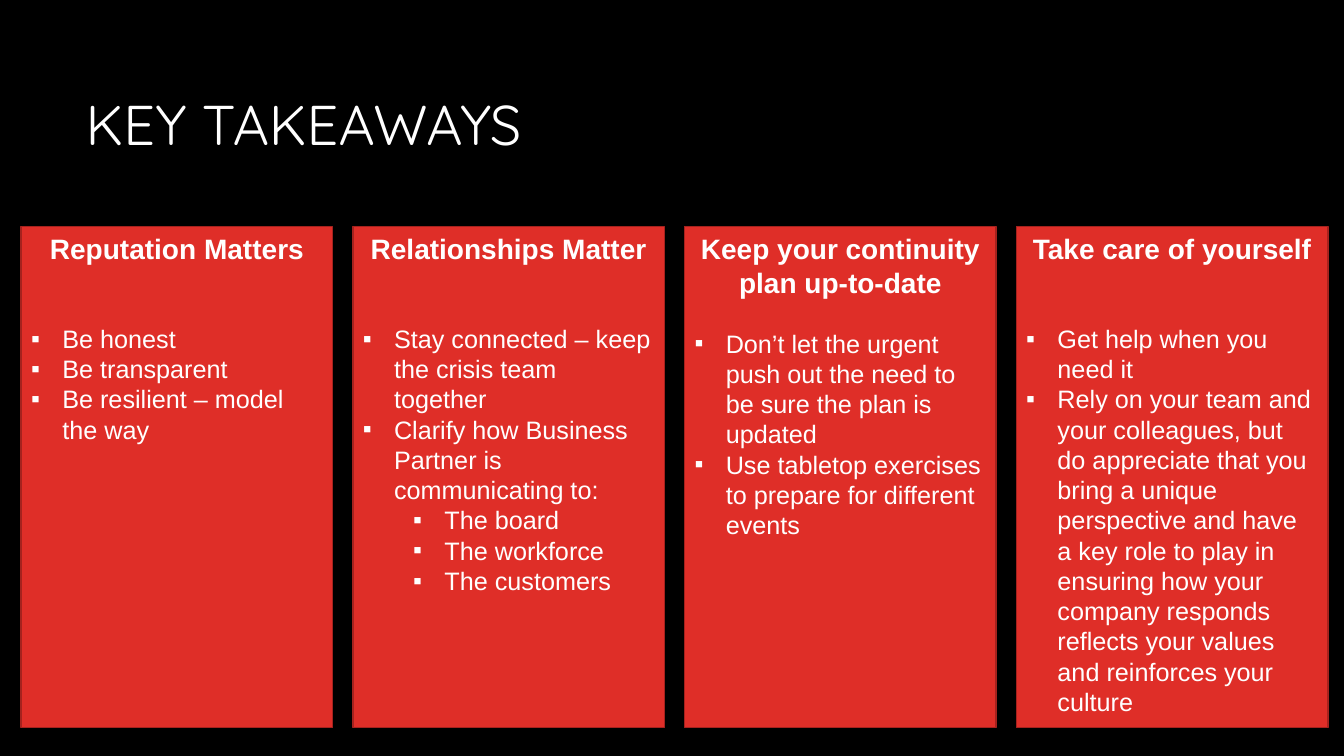
from dataclasses import dataclass

from lxml.etree import SubElement
from pptx import Presentation
from pptx.dml.color import RGBColor
from pptx.enum.shapes import MSO_SHAPE
from pptx.enum.text import MSO_ANCHOR, MSO_AUTO_SIZE, PP_ALIGN
from pptx.oxml.ns import qn
from pptx.util import Inches, Pt

TITLE = "KEY TAKEAWAYS"

# (heading, lines the heading takes, [(level, point), ...])
TAKEAWAYS = [
    ("Reputation Matters", 1, [
        (0, "Be honest"),
        (0, "Be transparent"),
        (0, "Be resilient – model the way"),
    ]),
    ("Relationships Matter", 1, [
        (0, "Stay connected – keep the crisis team together"),
        (0, "Clarify how Business Partner is communicating to:"),
        (1, "The board"),
        (1, "The workforce"),
        (1, "The customers"),
    ]),
    ("Keep your continuity plan up-to-date", 2, [
        (0, "Don’t let the urgent push out the need to be sure the plan is updated"),
        (0, "Use tabletop exercises to prepare for different events"),
    ]),
    ("Take care of yourself", 1, [
        (0, "Get help when you need it"),
        (0, "Rely on your team and your colleagues, but do appreciate that you "
            "bring a unique perspective and have a key role to play in ensuring "
            "how your company responds reflects your values and reinforces your "
            "culture"),
    ]),
]


@dataclass(frozen=True)
class Theme:
    background: RGBColor = RGBColor(0x00, 0x00, 0x00)
    text: RGBColor = RGBColor(0xFF, 0xFF, 0xFF)
    card: RGBColor = RGBColor(0xDF, 0x2E, 0x28)
    border: RGBColor = RGBColor(0xA5, 0x22, 0x1E)
    title_font: str = "Quicksand"
    body_font: str = "Arial"
    title_size: float = 40
    heading_size: float = 20
    point_size: float = 18
    point_line: float = 20.7


THEME = Theme()
CARD_LEFT, CARD_TOP, CARD_WIDTH, CARD_HEIGHT = 0.21, 2.25, 3.09, 4.97
CARD_PITCH = 3.29
BULLET_INDENT, LEVEL_INDENT = 0.31, 0.5


def write(paragraph, text, name, size, bold=False):
    run = paragraph.add_run()
    run.text = text
    for attribute, value in {"name": name, "size": Pt(size), "bold": bold}.items():
        setattr(run.font, attribute, value)
    run.font.color.rgb = THEME.text


def add_bullet(paragraph, level):
    paragraph.level = level
    properties = paragraph._p.get_or_add_pPr()
    properties.set("marL", str(Inches(BULLET_INDENT + level * LEVEL_INDENT)))
    properties.set("indent", str(-Inches(BULLET_INDENT)))
    SubElement(properties, qn("a:buFont"), typeface=THEME.body_font)
    SubElement(properties, qn("a:buChar"), char="▪")


def add_title(slide):
    title = slide.shapes.title
    box = {"left": 0.75, "top": 0.56, "width": 11.83, "height": 1.41}
    for attribute, value in box.items():
        setattr(title, attribute, Inches(value))
    frame = title.text_frame
    frame.auto_size = MSO_AUTO_SIZE.NONE
    frame.vertical_anchor = MSO_ANCHOR.MIDDLE
    paragraph = frame.paragraphs[0]
    paragraph.alignment = PP_ALIGN.LEFT
    paragraph.line_spacing = 0.9
    write(paragraph, TITLE, THEME.title_font, THEME.title_size)


def add_card(slide, column, heading, heading_lines, points):
    card = slide.shapes.add_shape(
        MSO_SHAPE.RECTANGLE, Inches(CARD_LEFT + column * CARD_PITCH),
        Inches(CARD_TOP), Inches(CARD_WIDTH), Inches(CARD_HEIGHT))
    card.shadow.inherit = False
    card.fill.solid()
    card.fill.fore_color.rgb = THEME.card
    card.line.color.rgb = THEME.border
    card.line.width = Pt(1)

    frame = card.text_frame
    frame.word_wrap = True
    frame.vertical_anchor = MSO_ANCHOR.TOP
    head = frame.paragraphs[0]
    head.alignment = PP_ALIGN.CENTER
    # Shorter headings get a larger gap, so the lists start level.
    head.space_after = Pt((3 - heading_lines) * THEME.point_line)
    write(head, heading, THEME.body_font, THEME.heading_size, bold=True)
    for level, point in points:
        paragraph = frame.add_paragraph()
        paragraph.alignment = PP_ALIGN.LEFT
        add_bullet(paragraph, level)
        write(paragraph, point, THEME.body_font, THEME.point_size)


def main():
    presentation = Presentation()
    presentation.slide_width = Inches(13.33)
    presentation.slide_height = Inches(7.5)
    slide = presentation.slides.add_slide(presentation.slide_layouts.get_by_name("Title Only"))
    slide.background.fill.solid()
    slide.background.fill.fore_color.rgb = THEME.background
    add_title(slide)
    for column, takeaway in enumerate(TAKEAWAYS):
        add_card(slide, column, *takeaway)
    presentation.save("out.pptx")


if __name__ == "__main__":
    main()
